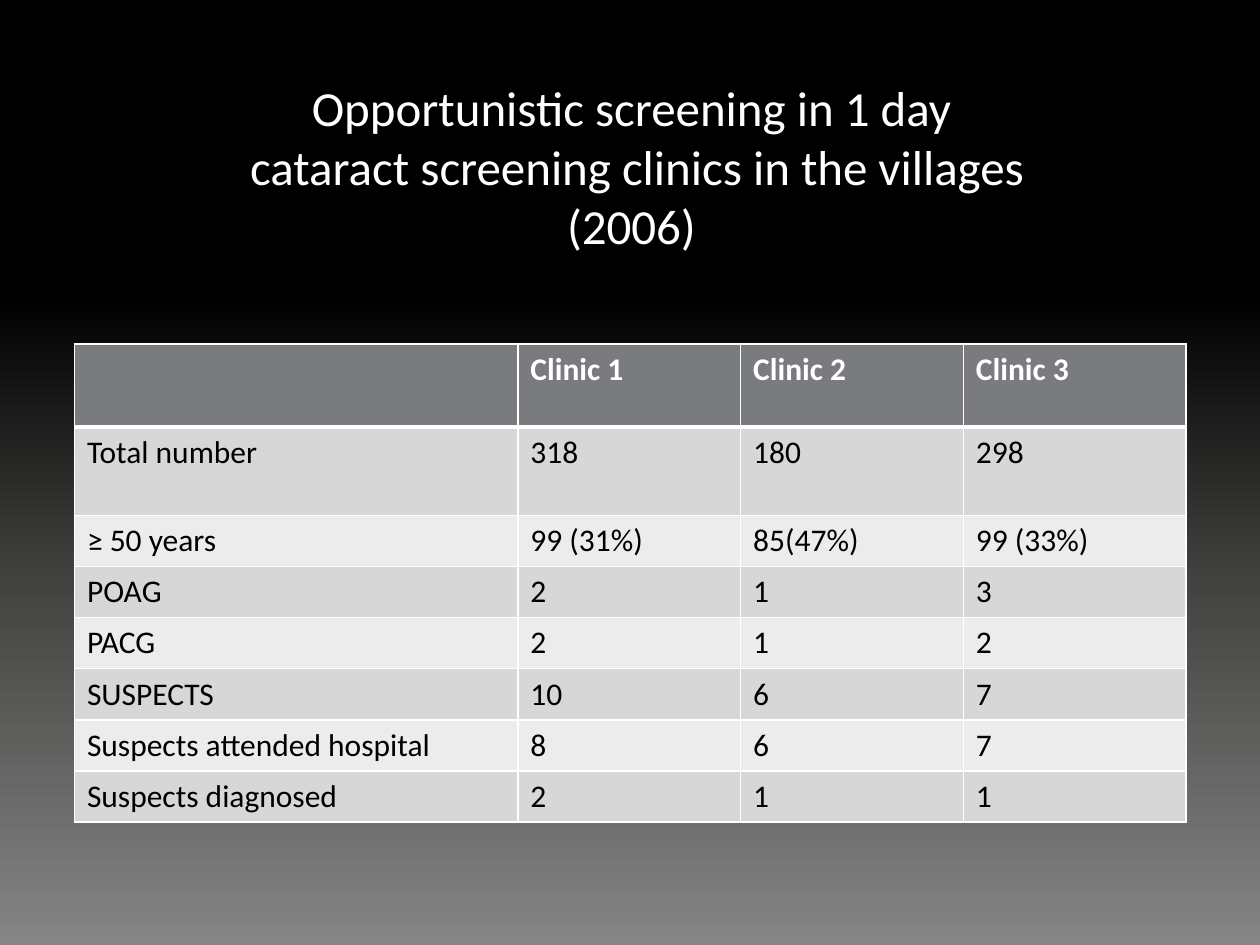
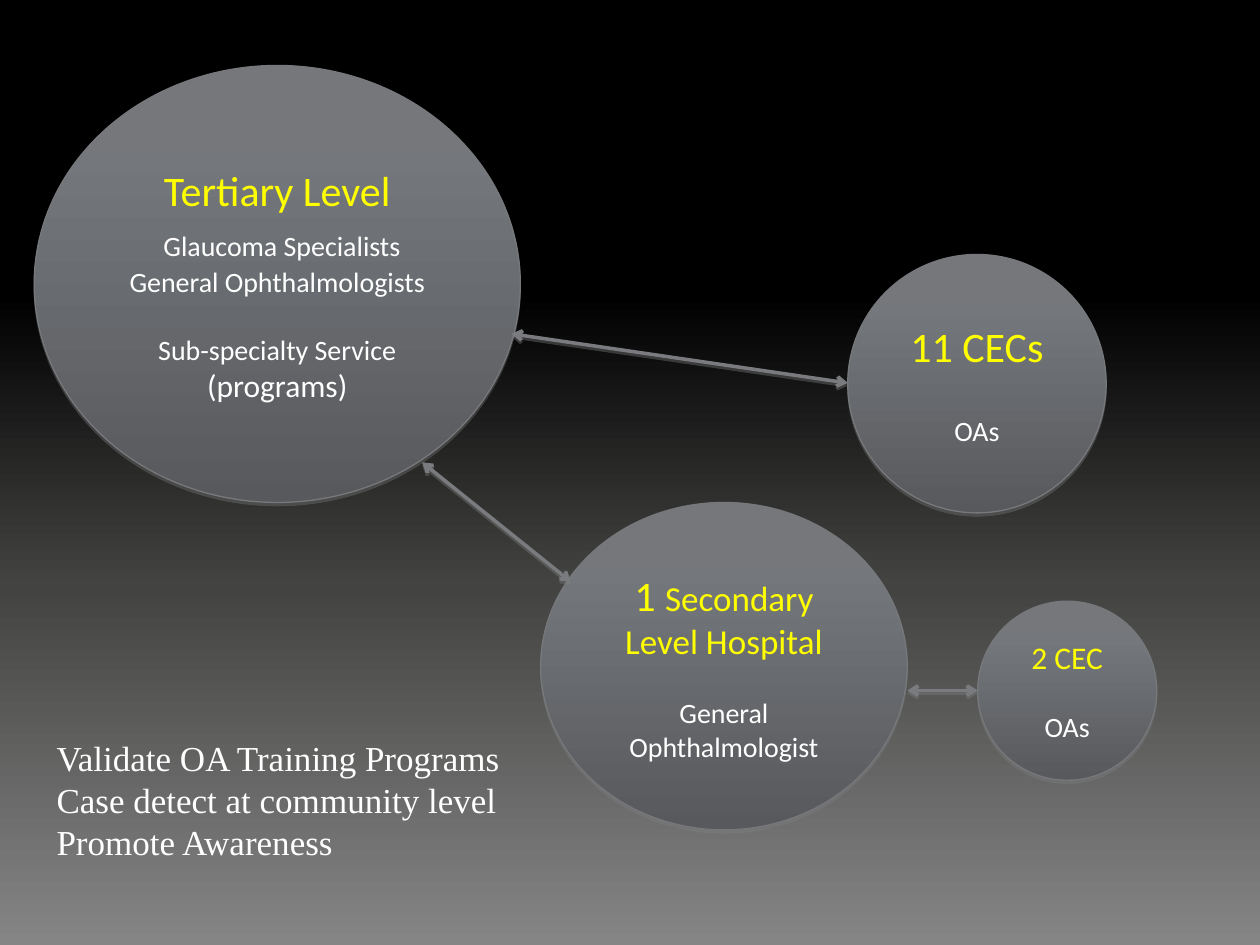
from lxml.etree import SubElement as Sub
from pptx import Presentation as Deck
from pptx.dml.color import RGBColor as Rgb
from pptx.enum.shapes import MSO_CONNECTOR as Link, MSO_SHAPE as Kind
from pptx.enum.text import MSO_ANCHOR as Anchor, PP_ALIGN as Align
from pptx.oxml.ns import qn
from pptx.util import Cm, Pt

WHITE, BLACK, YELLOW = "FFFFFF", "000000", "FFFF00"
GREY, EDGE, SHADE = "797B7E", "76787B", "808080"
BANDS = ("D7D7D8", "ECECEC")
SKY = ((0, BLACK), (31, BLACK), (62, "434342"), (100, "858585"))
BALL = ((0, "75777B"), (20, "74777B"), (100, "57595C"))


def hue(code):
    """Turn a hex string into a colour."""
    return Rgb.from_string(code)


def style(size, color=WHITE, name="Calibri", bold=False):
    """Return the format values of a run."""
    return {"size": Pt(size), "name": name, "bold": bold, "color": color}


def dress(font, look):
    """Set the format values on a font."""
    for key, value in look.items():
        if key == "color":
            font.color.rgb = hue(value)
        else:
            setattr(font, key, value)


def write(frame, paras, align=Align.LEFT, anchor=Anchor.TOP):
    """Fill a frame with paragraphs given as a gap and styled runs."""
    frame.word_wrap = True
    frame.vertical_anchor = anchor
    for at, (gap, *runs) in enumerate(paras):
        para = frame.add_paragraph() if at else frame.paragraphs[0]
        para.alignment, para.space_before = align, Pt(gap)
        for words, look in runs:
            for row, part in enumerate(words.split("\n")):
                if row:
                    para.add_line_break()
                run = para.add_run()
                run.text = part
                dress(run.font, look)


def tint(node, code):
    """Add a hex colour to an XML node."""
    return Sub(node, qn("a:srgbClr"), val=code)


def blend(fill, root, stops):
    """Give a fill a gradient that runs downward."""
    fill.gradient()
    fill.gradient_angle = 270
    group = root.xpath(".//a:gsLst")[0]
    for old in list(group):
        group.remove(old)
    for spot, code in stops:
        tint(Sub(group, qn("a:gs"), pos=str(spot * 1000)), code)


def shade(shape, alpha, dist):
    """Drop a hard shadow straight below a shape."""
    part = shape.element.spPr
    glow = Sub(Sub(part, qn("a:effectLst")), qn("a:outerShdw"), blurRad="0",
               dist=str(Pt(dist)), dir="5400000", rotWithShape="0")
    Sub(tint(glow, SHADE), qn("a:alpha"), val=str(alpha * 1000))


def page(deck):
    """Add a blank slide with the shared backdrop."""
    slide = deck.slides.add_slide(deck.slide_layouts[6])
    blend(slide.background.fill, slide.element, SKY)
    return slide


def label(slide, box, paras, **place):
    """Add a text box."""
    shape = slide.shapes.add_textbox(*map(Cm, box))
    write(shape.text_frame, paras, **place)


def frame(cell, base):
    """Draw the four borders of a cell from its top and bottom widths."""
    top, low = base
    for side, width in zip("LRTB", (1, 1, top, low)):
        line = Sub(cell._tc.get_or_add_tcPr(), qn(f"a:ln{side}"), w=str(Pt(width)))
        tint(Sub(line, qn("a:solidFill")), WHITE)


def grid(slide, left, top, wide, high, rows):
    """Add a table with a dark head row and banded body rows."""
    table = slide.shapes.add_table(len(rows), len(wide), Cm(left), Cm(top),
                                   Cm(sum(wide)), Cm(sum(high))).table
    for col, width in zip(table.columns, wide):
        col.width = Cm(width)
    for at, (row, tall, texts) in enumerate(zip(table.rows, high, rows)):
        row.height = Cm(tall)
        look = style(18, BLACK if at else WHITE, bold=not at)
        for cell, words in zip(row.cells, texts):
            frame(cell, (3 if at == 1 else 1, 1 if at else 3))
            cell.fill.solid()
            cell.fill.fore_color.rgb = hue(BANDS[(at - 1) % 2] if at else GREY)
            if words:
                write(cell.text_frame, [(0, (words, look))])


def ball(slide, box, paras):
    """Add a shaded ellipse with centred text."""
    shape = slide.shapes.add_shape(Kind.OVAL, *map(Cm, box))
    blend(shape.fill, shape.element.spPr, BALL)
    shape.line.color.rgb = hue(EDGE)
    shape.line.width = Pt(0.75)
    shade(shape, 35, 1.8)
    write(shape.text_frame, paras, align=Align.CENTER, anchor=Anchor.MIDDLE)


def arrow(slide, *ends):
    """Add a line with an arrowhead at both ends."""
    line = slide.shapes.add_connector(Link.STRAIGHT, *map(Cm, ends))
    line.line.color.rgb = hue(GREY)
    line.line.width = Pt(2)
    for end in ("head", "tail"):
        Sub(line.line._get_or_add_ln(), qn(f"a:{end}End"), type="arrow")
    shade(line, 38, 1.6)


def clinics(deck):
    """Build the slide on the screening clinics."""
    slide = page(deck)
    title = ("Opportunistic screening in 1 day\n"
             " cataract screening clinics in the villages\n(2006)")
    label(slide, (1.3, 1.52, 22.86, 3.66), [(0, (title, style(28)))],
          align=Align.CENTER, anchor=Anchor.MIDDLE)
    rows = (
        ("", "Clinic 1", "Clinic 2", "Clinic 3"),
        ("Total number", "318", "180", "298"),
        ("≥ 50 years", "99 (31%)", "85(47%)", "99 (33%)"),
        ("POAG", "2", "1", "3"),
        ("PACG", "2", "1", "2"),
        ("SUSPECTS", "10", "6", "7"),
        ("Suspects attended hospital", "8", "6", "7"),
        ("Suspects diagnosed", "2", "1", "1"),
    )
    grid(slide, 1.5, 6.93, [8.94] + [4.49] * 3, [1.68, 1.78] + [1.03] * 6, rows)


def levels(deck):
    """Build the slide on the levels of care."""
    slide = page(deck)
    head, mid, sub = (style(size, YELLOW) for size in (24, 20, 18))
    body = style(16)
    ball(slide, (0.69, 1.32, 9.8, 8.81), [
        (0, ("Tertiary Level", head)),
        (0, (" ", style(24)), ("Glaucoma Specialists", body)),
        (0, ("General Ophthalmologists", body)),
        (19.5, ("Sub-specialty Service", body)),
        (0, ("(programs)", style(18)))])
    ball(slide, (17.09, 5.13, 5.21, 5.21), [
        (0, ("11 CECs", head)), (24.5, ("OAs", body))])
    ball(slide, (10.9, 10.13, 7.39, 6.6), [
        (0, ("1 ", head), ("Secondary Level Hospital", mid)),
        (19.5, ("General Ophthalmologist", body))])
    ball(slide, (19.71, 12.12, 3.61, 3.61), [
        (0, ("2 CEC", sub)), (19.5, ("OAs", body))])
    arrow(slide, 10.31, 6.73, 17.09, 7.72)
    arrow(slide, 8.51, 9.32, 11.51, 11.73)
    arrow(slide, 18.29, 13.92, 19.71, 13.92)
    goals = ("Validate OA Training Programs", "Case detect at community level",
             "Promote Awareness")
    serif = style(20, name="Times New Roman")
    label(slide, (0.89, 14.73, 10.01, 3.86), [(0, (goal, serif)) for goal in goals])


def main():
    """Build and save the deck."""
    deck = Deck()
    deck.slide_width, deck.slide_height = Cm(25.4), Cm(19.05)
    clinics(deck)
    levels(deck)
    deck.save("out.pptx")


if __name__ == "__main__":
    main()
